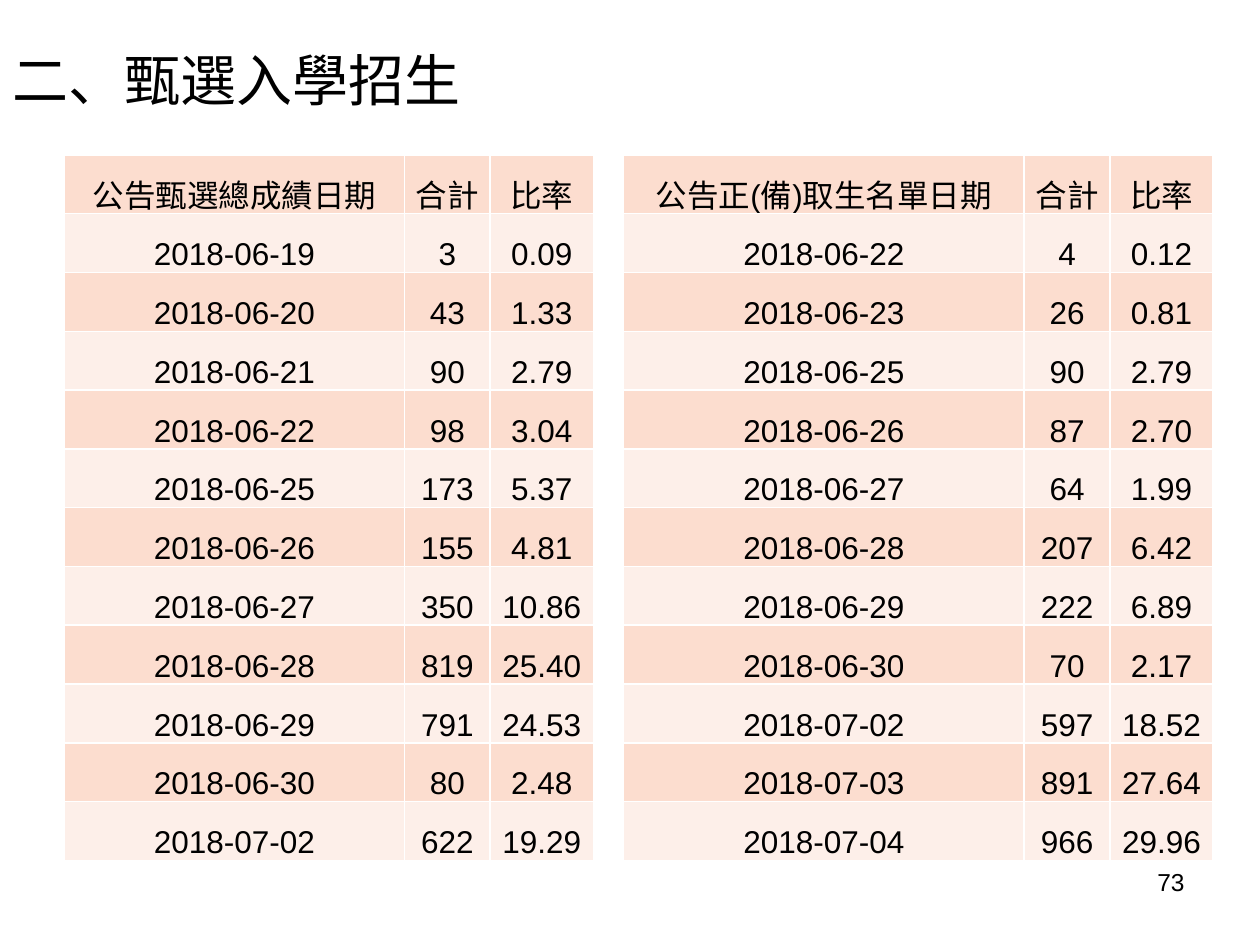
from dataclasses import dataclass

from lxml.etree import SubElement
from pptx import Presentation
from pptx.dml.color import RGBColor
from pptx.enum.text import MSO_ANCHOR as Anchor, PP_ALIGN as Align
from pptx.oxml.ns import qn
from pptx.util import Inches, Pt


@dataclass(frozen=True)
class Theme:
    text: str = "000000"
    paper: str = "FFFFFF"
    bands: tuple = ("FCDDCF", "FDEFE9")
    body_font: str = "Arial"
    title_font: str = "Noto Sans CJK JP"
    title_size: int = 32
    table_size: int = 18
    number_size: int = 14
    border_width: int = 1


THEME = Theme()
TITLE_BOX = (0, 0.28, 9, 0.69)
TABLE_BOX = (0.51, 1.23, 8.98, 5.6)
NUMBER_BOX = (7.17, 6.83, 2.33, 0.52)
CELL_INSETS = (0.01, 0.01, 0.01, 0)
COLUMN_WIDTHS = (2.7, 0.68, 0.82, 0.1, 3.18, 0.68, 0.82)

SCORE_DATES = [
    ("公告甄選總成績日期", "合計", "比率"),
    ("2018-06-19", "3", "0.09"),
    ("2018-06-20", "43", "1.33"),
    ("2018-06-21", "90", "2.79"),
    ("2018-06-22", "98", "3.04"),
    ("2018-06-25", "173", "5.37"),
    ("2018-06-26", "155", "4.81"),
    ("2018-06-27", "350", "10.86"),
    ("2018-06-28", "819", "25.40"),
    ("2018-06-29", "791", "24.53"),
    ("2018-06-30", "80", "2.48"),
    ("2018-07-02", "622", "19.29"),
]
ADMISSION_DATES = [
    ("公告正(備)取生名單日期", "合計", "比率"),
    ("2018-06-22", "4", "0.12"),
    ("2018-06-23", "26", "0.81"),
    ("2018-06-25", "90", "2.79"),
    ("2018-06-26", "87", "2.70"),
    ("2018-06-27", "64", "1.99"),
    ("2018-06-28", "207", "6.42"),
    ("2018-06-29", "222", "6.89"),
    ("2018-06-30", "70", "2.17"),
    ("2018-07-02", "597", "18.52"),
    ("2018-07-03", "891", "27.64"),
    ("2018-07-04", "966", "29.96"),
]


def inches(values):
    return [Inches(value) for value in values]


def write_text(frame, text, size, font=THEME.body_font, align=Align.LEFT):
    paragraph = frame.paragraphs[0]
    paragraph.alignment = align
    run = paragraph.add_run()
    run.text = text
    run.font.size = Pt(size)
    run.font.name = font
    run.font.color.rgb = RGBColor.from_string(THEME.text)
    SubElement(run.font._element, qn("a:ea"), typeface=font)


def fill_cell(cell, color):
    """Fill the cell and draw its four borders, which must precede the fill."""
    properties = cell._tc.get_or_add_tcPr()
    for side in ("lnL", "lnR", "lnT", "lnB"):
        line = SubElement(properties, qn(f"a:{side}"), w=str(Pt(THEME.border_width)))
        solid = SubElement(line, qn("a:solidFill"))
        SubElement(solid, qn("a:srgbClr"), val=THEME.paper)
    cell.fill.solid()
    cell.fill.fore_color.rgb = RGBColor.from_string(color)


def add_title(slide, box, text):
    title = slide.shapes.title
    title.left, title.top, title.width, title.height = inches(box)
    title.text_frame.vertical_anchor = Anchor.MIDDLE
    write_text(title.text_frame, text, THEME.title_size, font=THEME.title_font)


def add_date_table(slide, box, left_rows, right_rows):
    """Show two date lists side by side, parted by a blank column."""
    rows = [(*left, "", *right) for left, right in zip(left_rows, right_rows)]
    table = slide.shapes.add_table(len(rows), len(COLUMN_WIDTHS), *inches(box)).table
    for column, width in zip(table.columns, COLUMN_WIDTHS):
        column.width = Inches(width)
    for row_index, values in enumerate(rows):
        table.rows[row_index].height = Inches(box[3] / len(rows))
        band = THEME.bands[row_index % 2]
        for column_index, value in enumerate(values):
            cell = table.cell(row_index, column_index)
            fill_cell(cell, band if value else THEME.paper)
            if value:
                (cell.margin_left, cell.margin_top,
                 cell.margin_right, cell.margin_bottom) = inches(CELL_INSETS)
                cell.vertical_anchor = Anchor.BOTTOM
                write_text(cell.text_frame, value, THEME.table_size, align=Align.CENTER)


def add_page_number(slide, box, text):
    frame = slide.shapes.add_textbox(*inches(box)).text_frame
    frame.word_wrap = True
    write_text(frame, text, THEME.number_size, align=Align.RIGHT)


def main():
    presentation = Presentation()
    presentation.slide_width, presentation.slide_height = inches((10, 7.5))
    slide = presentation.slides.add_slide(presentation.slide_layouts.get_by_name("Title Only"))
    add_date_table(slide, TABLE_BOX, SCORE_DATES, ADMISSION_DATES)
    add_page_number(slide, NUMBER_BOX, "73")
    add_title(slide, TITLE_BOX, "二、甄選入學招生")
    presentation.save("out.pptx")


if __name__ == "__main__":
    main()
